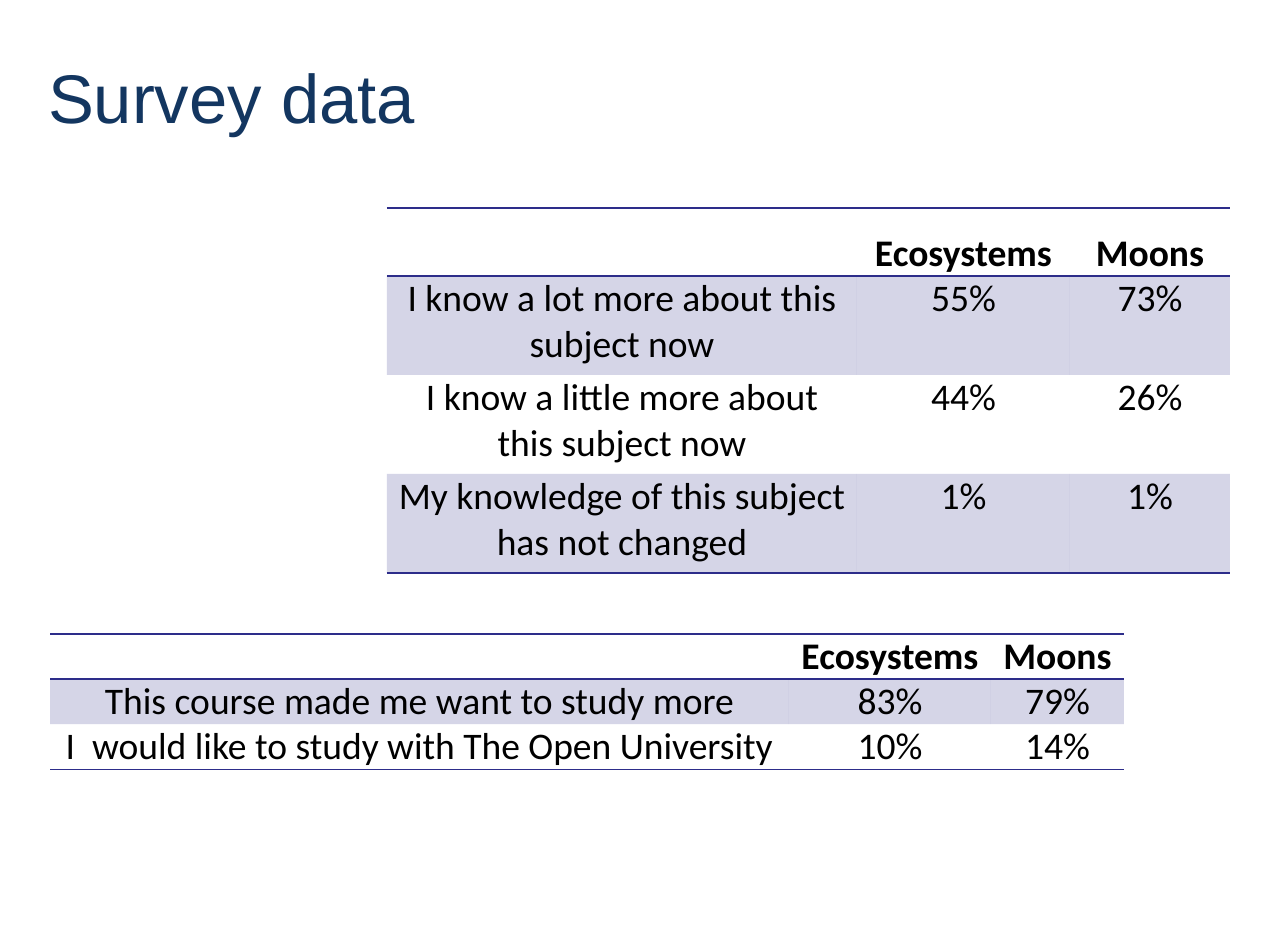
from lxml import etree
from pptx import Presentation
from pptx.dml.color import RGBColor
from pptx.enum.text import MSO_ANCHOR, PP_ALIGN
from pptx.oxml.ns import qn
from pptx.util import Pt

PX = 8121
LEFT, CENTER = PP_ALIGN.LEFT, PP_ALIGN.CENTER
MIDDLE = MSO_ANCHOR.MIDDLE
COLORS = {"title": "133660", "text": "000000", "accent": "2D2D8A"}
NO_STYLE = "{2D5ABB26-0587-4C30-8999-92F81FD0307C}"
BAND_ALPHA = "20000"
LINE_WIDTH = str(Pt(1))


def write_text(frame, text, font="Calibri", size=24, color="text",
               bold=False, align=CENTER, line_spacing=1.0):
    frame.word_wrap = True
    paragraph = frame.paragraphs[0]
    paragraph.alignment = align
    paragraph.line_spacing = line_spacing
    paragraph.font.size = Pt(size)
    if not text:
        return
    run = paragraph.add_run()
    run.text = text
    run.font.name = font
    run.font.size = Pt(size)
    run.font.bold = bold
    run.font.color.rgb = RGBColor.from_string(COLORS[color])


def add_border(cell, tag, position):
    properties = cell._tc.get_or_add_tcPr()
    line = etree.Element(qn(tag), w=LINE_WIDTH)
    fill = etree.SubElement(line, qn("a:solidFill"))
    etree.SubElement(fill, qn("a:srgbClr"), val=COLORS["accent"])
    properties.insert(position, line)


presentation = Presentation()
presentation.slide_width = 1288 * PX
presentation.slide_height = 931 * PX
slide = presentation.slides.add_slide(presentation.slide_layouts[6])

title = slide.shapes.add_textbox(34 * PX, 50 * PX, 1033 * PX, 93 * PX).text_frame
title.margin_left = 14 * PX
title.vertical_anchor = MIDDLE
write_text(title, "Survey data", font="Arial", size=44, color="title", align=LEFT)

header = ["", "Ecosystems", "Moons"]
survey_tables = [
    {
        "left": 387, "top": 208, "widths": [470, 213, 160],
        "header_height": 68, "row_height": 99, "header_spacing": 1.5,
        "answers": [
            ["I know a lot more about this subject now", "55%", "73%"],
            ["I know a little more about this subject now", "44%", "26%"],
            ["My knowledge of this subject has not changed", "1%", "1%"],
        ],
    },
    {
        "left": 50, "top": 634, "widths": [739, 202, 133],
        "header_height": 45, "row_height": 45, "header_spacing": 1.0,
        "answers": [
            ["This course made me want to study more", "83%", "79%"],
            ["I  would like to study with The Open University", "10%", "14%"],
        ],
    },
]

for survey in survey_tables:
    rows = [header] + survey["answers"]
    last_row = len(rows) - 1
    height = survey["header_height"] + last_row * survey["row_height"]
    table = slide.shapes.add_table(
        len(rows), len(header), survey["left"] * PX, survey["top"] * PX,
        sum(survey["widths"]) * PX, height * PX).table
    table.horz_banding = False
    table._tbl.tblPr.find(qn("a:tableStyleId")).text = NO_STYLE
    for column, width in zip(table.columns, survey["widths"]):
        column.width = width * PX

    for row_index, texts in enumerate(rows):
        is_header = row_index == 0
        table.rows[row_index].height = PX * survey[
            "header_height" if is_header else "row_height"]
        for column_index, text in enumerate(texts):
            cell = table.cell(row_index, column_index)
            cell.margin_left = cell.margin_right = 8 * PX
            cell.margin_top = cell.margin_bottom = 0
            write_text(cell.text_frame, text, bold=is_header,
                       line_spacing=survey["header_spacing"] if is_header else 1.0)
            if row_index % 2:
                cell.fill.solid()
                cell.fill.fore_color.rgb = RGBColor.from_string(COLORS["accent"])
                color = cell._tc.tcPr.find(".//" + qn("a:srgbClr"))
                etree.SubElement(color, qn("a:alpha"), val=BAND_ALPHA)
            else:
                cell.fill.background()
            if row_index in (0, last_row):
                add_border(cell, "a:lnB", 0)
            if is_header:
                add_border(cell, "a:lnT", 0)

presentation.save("out.pptx")
